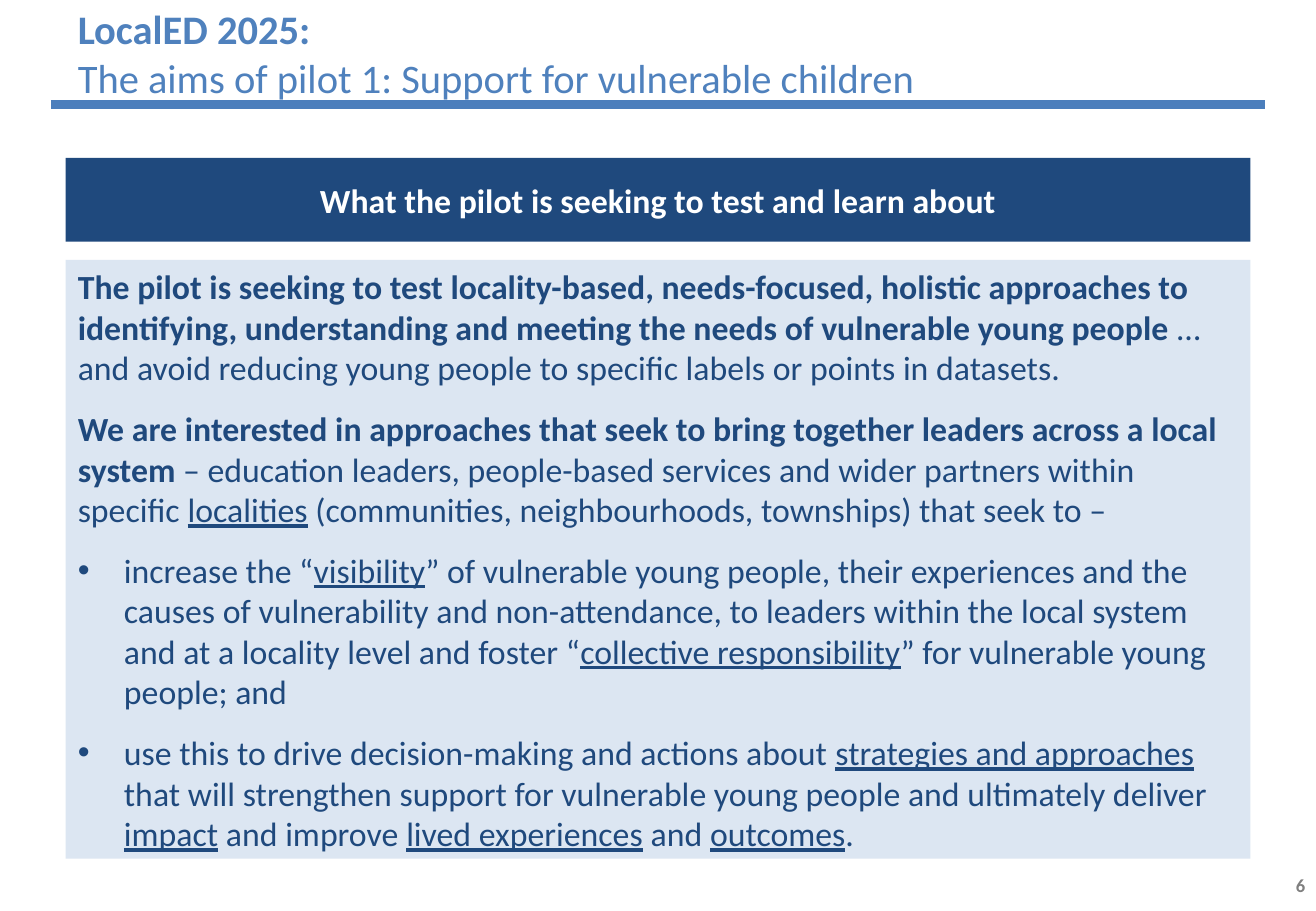
from lxml.etree import SubElement
from pptx import Presentation
from pptx.dml.color import RGBColor
from pptx.enum.shapes import MSO_CONNECTOR as Connector, MSO_SHAPE as Shape
from pptx.enum.text import MSO_ANCHOR as Anchor, MSO_AUTO_SIZE as AutoSize, PP_ALIGN as Align
from pptx.oxml.ns import qn
from pptx.util import Inches, Pt

NAVY, BLUE, PALE, GREY, WHITE = "1F497D", "4F81BD", "DCE6F2", "808080", "FFFFFF"
LEFT, WIDTH = 0.54, 9.75


def paint(color_format, color):
    color_format.rgb = RGBColor.from_string(color)


def add_run(paragraph, text, size, color, style=""):
    run = paragraph.add_run()
    run.text = text
    run.font.name = "Calibri"
    run.font.size = Pt(size)
    run.font.bold = style == "bold"
    run.font.underline = style == "underline"
    paint(run.font.color, color)


deck = Presentation()
deck.slide_width, deck.slide_height = Inches(10.83), Inches(7.5)
slide = deck.slides.add_slide(deck.slide_layouts[1])
title, aims = slide.placeholders

rule = slide.shapes.add_connector(
    Connector.STRAIGHT, Inches(0.42), Inches(0.86), Inches(10.41), Inches(0.86))
rule.line.width = Pt(5)
paint(rule.line.color, "4B7EBC")
SubElement(rule._element.spPr, qn("a:effectLst"))

title.left, title.top = Inches(LEFT), Inches(-0.04)
title.width, title.height = Inches(8.62), Inches(0.95)
title.text_frame.auto_size = AutoSize.NONE
title.text_frame.vertical_anchor = Anchor.MIDDLE
programme = title.text_frame.paragraphs[0]
subject = title.text_frame.add_paragraph()
add_run(programme, "LocalED 2025:", 24, BLUE, "bold")
add_run(subject, "The aims of pilot 1: Support for vulnerable children", 24, BLUE)
for heading in (programme, subject):
    heading.alignment = Align.LEFT

banner = slide.shapes.add_shape(
    Shape.RECTANGLE, Inches(LEFT), Inches(1.3), Inches(WIDTH), Inches(0.69))
banner.shadow.inherit = False
banner.fill.solid()
paint(banner.fill.fore_color, NAVY)
banner.line.fill.background()
banner.text_frame.vertical_anchor = Anchor.MIDDLE
banner_text = banner.text_frame.paragraphs[0]
banner_text.alignment = Align.CENTER
add_run(banner_text, "What the pilot is seeking to test and learn about", 20, WHITE, "bold")

aims.left, aims.top = Inches(LEFT), Inches(2.14)
aims.width, aims.height = Inches(WIDTH), Inches(4.93)
aims.fill.solid()
paint(aims.fill.fore_color, PALE)
aims.text_frame.auto_size = AutoSize.NONE
aims.text_frame.vertical_anchor = Anchor.TOP

statements = [
    (False, [
        ("The pilot is seeking to test locality-based, needs-focused, holistic approaches to "
         "identifying, understanding and meeting the needs of vulnerable young people ", "bold"),
        ("… and avoid reducing young people to specific labels or points in datasets.", ""),
    ]),
    (False, [
        ("We are interested in approaches that seek to bring together leaders "
         "across a local system", "bold"),
        (" – education leaders, people-based services and wider partners within specific ", ""),
        ("localities", "underline"),
        (" (communities, neighbourhoods, townships) that seek to –", ""),
    ]),
    (True, [
        ("increase the “", ""),
        ("visibility", "underline"),
        ("” of vulnerable young people, their experiences and the causes of vulnerability and "
         "non-attendance, to leaders within the local system and at a locality level "
         "and foster “", ""),
        ("collective responsibility", "underline"),
        ("” for vulnerable young people; and", ""),
    ]),
    (True, [
        ("use this to drive decision-making and actions about ", ""),
        ("strategies and approaches", "underline"),
        (" that will strengthen support for vulnerable young people "
         "and ultimately deliver ", ""),
        ("impact", "underline"),
        (" and improve ", ""),
        ("lived experiences", "underline"),
        (" and ", ""),
        ("outcomes", "underline"),
        (".", ""),
    ]),
]
for number, (bulleted, phrases) in enumerate(statements):
    statement = aims.text_frame.add_paragraph() if number else aims.text_frame.paragraphs[0]
    properties = statement._p.get_or_add_pPr()
    indent = Inches(0.38) if bulleted else 0
    properties.set("marL", str(indent))
    properties.set("indent", str(-indent))
    if bulleted:
        SubElement(properties, qn("a:buFont"), typeface="Arial")
        SubElement(properties, qn("a:buChar"), char="•")
    else:
        SubElement(properties, qn("a:buNone"))
    statement.space_before, statement.space_after = Pt(0), Pt(12)
    for text, style in phrases:
        add_run(statement, text, 20, NAVY, style)

page = slide.shapes.add_textbox(Inches(8.31), Inches(7.07), Inches(2.53), Inches(0.43))
page.text_frame.word_wrap = True
page.text_frame.vertical_anchor = Anchor.MIDDLE
page_number = page.text_frame.paragraphs[0]
page_number.alignment = Align.RIGHT
add_run(page_number, "6", 11, GREY, "bold")

deck.save("out.pptx")
